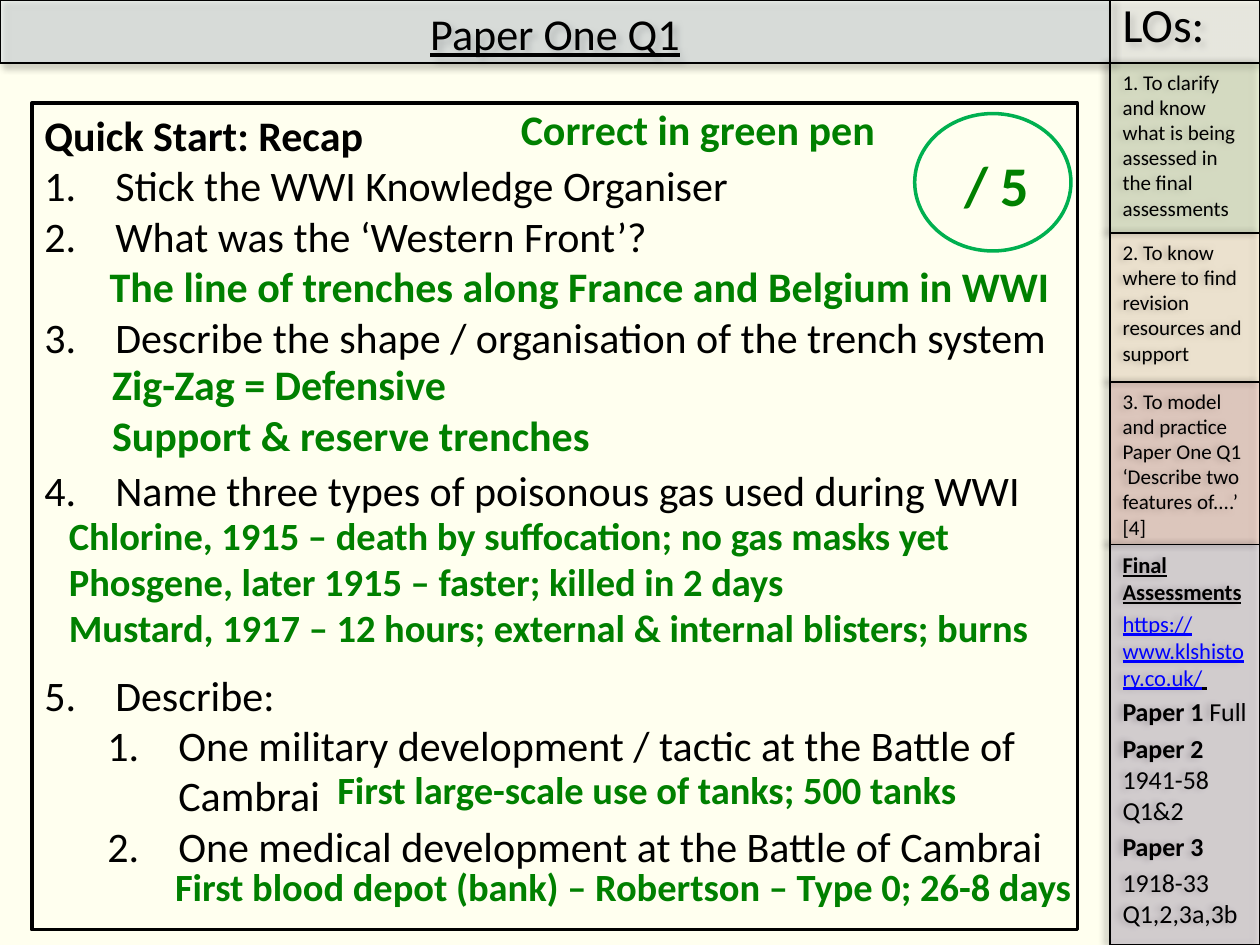
from lxml import etree
from pptx import Presentation
from pptx import util as u
from pptx.dml.color import RGBColor
from pptx.enum import shapes, text
from pptx.oxml.ns import qn

FONT = "Calibri"
BLACK, GREEN, CREAM = "000000", "008000", "FFFFEF"
LINE = 29.3  # height in points of one line of 24 pt text
SIDE_X, SIDE_W, BAR_H = 22.38, 3.02, 1.27

OBJECTIVES = [
    (3.43, "D7E4BD", 44, "1. To clarify and know what is being assessed in the final assessments"),
    (3, "FCD5B5", 25, "2. To know where to find revision resources and support"),
    (3.28, "D99694", 33, "3. To model and practice Paper One Q1 ‘Describe two features of....’ [4]"),
]
BOLD = dict(size=14.8, bold=True)
PLAIN = dict(size=14.8)
ASSESSMENTS = [
    [("Final Assessments", dict(size=12.9, bold=True, underline=True))],
    [("https://www.klshistory.co.uk/", dict(size=12.9, color="0000FF", underline=True)),
     (" ", dict(size=12.9, underline=True))],
    [("Paper 1 ", BOLD), ("Full", PLAIN)],
    [("Paper 2", BOLD), (" 1941-58 Q1&2", PLAIN)],
    [("Paper 3", BOLD)],
    [("1918-33 Q1,2,3a,3b", PLAIN)],
]
# question, level, answer lines left free above it
QUESTIONS = [
    ("Stick the WWI Knowledge Organiser", 0, 0),
    ("What was the ‘Western Front’?", 0, 0),
    ("Describe the shape / organisation of the trench system", 0, 1),
    ("Name three types of poisonous gas used during WWI", 0, 2),
    ("Describe:", 0, 3),
    ("One military development / tactic at the Battle of Cambrai", 1, 0),
    ("One medical development at the Battle of Cambrai", 1, 0),
]
# left, top, width, height, size, lines
ANSWERS = [
    (1.96, 5.13, 19.76, 1.27, 24, ["The line of trenches along France and Belgium in WWI"]),
    (2.01, 7.11, 13.03, 2.31, 24, ["Zig-Zag = Defensive", "Support & reserve trenches"]),
    (1.14, 10.19, 20.57, 3.07, 22, [
        "Chlorine, 1915 – death by suffocation; no gas masks yet",
        "Phosgene, later 1915 – faster; killed in 2 days",
        "Mustard, 1917 – 12 hours; external & internal blisters; burns"]),
    (6.55, 15.32, 20.57, 1.19, 22, ["First large-scale use of tanks; 500 tanks"]),
    (3.28, 17.27, 20.57, 1.19, 22, ["First blood depot (bank) – Robertson – Type 0; 26-8 days"]),
]


def rgb(hex_color):
    return RGBColor.from_string(hex_color)


def place(sp, left, top, width, height):
    sp.left, sp.top, sp.width, sp.height = map(u.Cm, (left, top, width, height))


def prepare(tf):
    tf.word_wrap = True
    tf.auto_size = text.MSO_AUTO_SIZE.NONE
    tf.vertical_anchor = text.MSO_ANCHOR.TOP
    return tf


def add_run(p, words, size=24, color=BLACK, bold=False, underline=False):
    r = p.add_run()
    r.text = words
    r.font.name, r.font.size = FONT, u.Pt(size)
    r.font.bold, r.font.underline = bold, underline
    r.font.color.rgb = rgb(color)


def add_paragraph(tf, first, align=text.PP_ALIGN.LEFT, before=0):
    p = tf.paragraphs[0] if first else tf.add_paragraph()
    p.alignment = align
    p.space_before = u.Pt(0 if first else before)
    return p


def outline(sp, color=BLACK, width=0.75):
    sp.line.color.rgb = rgb(color)
    sp.line.width = u.Pt(width)


def style_panel(sp, fill, opacity, angle):
    """Translucent fill, thin outline and a soft shadow cast at the angle."""
    sp.fill.solid()
    sp.fill.fore_color.rgb = rgb(fill)
    outline(sp)
    sp.shadow.inherit = False
    spPr = sp._element.spPr
    etree.SubElement(spPr.find(qn("a:solidFill"))[0], qn("a:alpha"), val=str(opacity * 1000))
    shadow = etree.SubElement(spPr.find(qn("a:effectLst")), qn("a:outerShdw"),
                              blurRad=str(u.Pt(4)), dist=str(u.Pt(3)),
                              dir=str(angle * 60000), rotWithShape="0")
    color = etree.SubElement(shadow, qn("a:srgbClr"), val=BLACK)
    etree.SubElement(color, qn("a:alpha"), val="40000")


def add_panel(s, top, height, fill, opacity, paragraphs, angle=180):
    sp = s.shapes.add_shape(shapes.MSO_SHAPE.RECTANGLE, 0, 0, 0, 0)
    place(sp, SIDE_X, top, SIDE_W, height)
    style_panel(sp, fill, opacity, angle)
    tf = prepare(sp.text_frame)
    for i, runs in enumerate(paragraphs):
        p = add_paragraph(tf, i == 0, before=0.2 * runs[0][1]["size"])
        for words, fmt in runs:
            add_run(p, words, **fmt)
    return sp


def add_answer(s, left, top, width, height, size, lines, align=text.PP_ALIGN.LEFT):
    sp = s.shapes.add_textbox(0, 0, 0, 0)
    place(sp, left, top, width, height)
    tf = prepare(sp.text_frame)
    for i, words in enumerate(lines):
        add_run(add_paragraph(tf, i == 0, align), words, size, GREEN, bold=True)


def set_bullet(p, left, indent, numbered):
    pPr = p._p.get_or_add_pPr()
    pPr.set("marL", str(u.Cm(left)))
    pPr.set("indent", str(u.Cm(indent)))
    if numbered:
        etree.SubElement(pPr, qn("a:buFont"), typeface="+mj-lt")
        etree.SubElement(pPr, qn("a:buAutoNum"), type="arabicPeriod")
    else:
        etree.SubElement(pPr, qn("a:buNone"))


def fill_title(sp):
    place(sp, 0, 0, SIDE_X, BAR_H)
    style_panel(sp, "DCE6F2", 42, 45)
    p = add_paragraph(prepare(sp.text_frame), True, text.PP_ALIGN.CENTER)
    add_run(p, "Paper One Q1", 25.2, underline=True)


def fill_questions(sp):
    place(sp, 0.64, 2.08, 21.08, 16.66)
    sp.fill.solid()
    sp.fill.fore_color.rgb = rgb(CREAM)
    outline(sp, width=2)
    tf = prepare(sp.text_frame)
    p = add_paragraph(tf, True)
    set_bullet(p, 0, 0, False)
    add_run(p, "Quick Start: Recap", bold=True)
    for words, level, gap in QUESTIONS:
        p = add_paragraph(tf, False, before=gap * LINE)
        p.level = level
        set_bullet(p, 1.43 + 1.27 * level, -1.43, True)
        add_run(p, words)


def add_score(s):
    sp = s.shapes.add_shape(shapes.MSO_SHAPE.OVAL, 0, 0, 0, 0)
    place(sp, 18.44, 2.29, 3.15, 2.77)
    sp.fill.background()
    outline(sp, "00B050", 2)
    sp.shadow.inherit = False
    add_answer(s, 18.26, 2.9, 2.74, 1.63, 32, ["/ 5"], text.PP_ALIGN.RIGHT)


def main():
    prs = Presentation()
    prs.slide_width, prs.slide_height = u.Cm(25.4), u.Cm(19.05)
    s = prs.slides.add_slide(prs.slide_layouts[1])
    s.background.fill.solid()
    s.background.fill.fore_color.rgb = rgb(CREAM)

    fill_title(s.shapes.title)
    heading = add_panel(s, 0, BAR_H, "FFFFFF", 42, [[("LOs:", dict(size=27.2))]], angle=45)
    heading.text_frame.paragraphs[0].line_spacing = 0.8
    top = BAR_H
    for height, fill, opacity, words in OBJECTIVES:
        add_panel(s, top, height, fill, opacity, [[(words, dict(size=12))]])
        top += height
    add_panel(s, top, 19.05 - top, "B3A2C7", 31, ASSESSMENTS)

    fill_questions(s.placeholders[1])
    add_answer(s, 9.25, 1.96, 8.64, 1.27, 24, ["Correct in green pen"], text.PP_ALIGN.RIGHT)
    for answer in ANSWERS:
        add_answer(s, *answer)
    add_score(s)
    prs.save("out.pptx")


if __name__ == "__main__":
    main()
